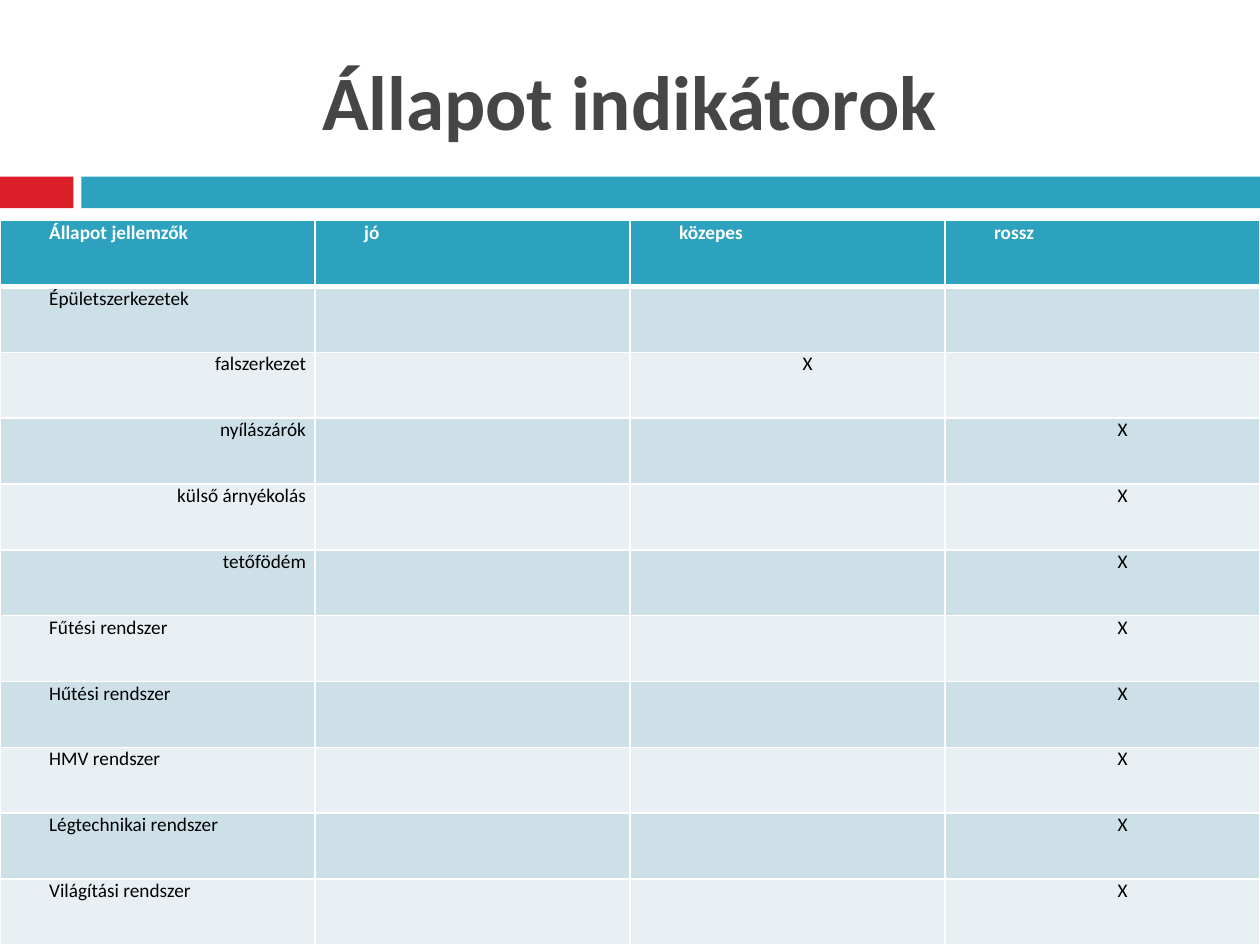
from lxml.etree import SubElement
from pptx import Presentation
from pptx.dml.color import RGBColor
from pptx.enum.shapes import MSO_SHAPE
from pptx.enum.text import MSO_ANCHOR, PP_ALIGN
from pptx.oxml import parse_xml
from pptx.oxml.ns import nsdecls
from pptx.util import Cm, Pt

TITLE = "Állapot indikátorok"
HEADER = ["Állapot jellemzők", "jó", "közepes", "rossz"]
GROUP, ITEM, SYSTEM = PP_ALIGN.JUSTIFY, PP_ALIGN.RIGHT, PP_ALIGN.LEFT
RATINGS = [
    ("Épületszerkezetek", GROUP, None),
    ("falszerkezet", ITEM, "közepes"),
    ("nyílászárók", ITEM, "rossz"),
    ("külső árnyékolás", ITEM, "rossz"),
    ("tetőfödém", ITEM, "rossz"),
    ("Fűtési rendszer", SYSTEM, "rossz"),
    ("Hűtési rendszer", SYSTEM, "rossz"),
    ("HMV rendszer", SYSTEM, "rossz"),
    ("Légtechnikai rendszer", SYSTEM, "rossz"),
    ("Világítási rendszer", SYSTEM, "rossz"),
]

THEME = {
    "font": "Calibri", "title_size": 44, "cell_size": 11,
    "title": "464646", "red": "DA1F28", "teal": "2DA2BF",
    "bands": ["CDE0E8", "E8F0F4"], "white": "FFFFFF", "black": "000000",
    "line": 1, "header_line": 3,
}

WIDTH, HEIGHT = 25.4, 19.05
BAR_TOP, BAR_HEIGHT = 3.56, 0.64
TABLE_TOP = 4.45
CELL_MARGIN, INDENT = 0.18, 0.81


def rgb(name):
    return RGBColor.from_string(THEME.get(name, name))


def style_text(p, size, color, bold):
    for r in p.runs:
        r.font.name = THEME["font"]
        r.font.size = Pt(THEME[size])
        r.font.bold = bold
        r.font.color.rgb = rgb(color)


def add_title(s):
    sp = s.shapes.title
    sp.left, sp.top, sp.width, sp.height = Cm(0), Cm(0.64), Cm(WIDTH), Cm(2.74)
    tf = sp.text_frame
    tf.text = TITLE
    tf.vertical_anchor = MSO_ANCHOR.MIDDLE
    p = tf.paragraphs[0]
    p.alignment = PP_ALIGN.CENTER
    style_text(p, "title_size", "title", True)


def add_bar(s, left, right, color):
    sp = s.shapes.add_shape(MSO_SHAPE.RECTANGLE, Cm(left), Cm(BAR_TOP),
                            Cm(right - left), Cm(BAR_HEIGHT))
    sp.shadow.inherit = False
    sp.fill.solid()
    sp.fill.fore_color.rgb = rgb(color)
    sp.line.fill.background()


def set_borders(cell, top, bottom):
    tcPr = cell._tc.get_or_add_tcPr()
    widths = {"lnL": THEME["line"], "lnR": THEME["line"], "lnT": top, "lnB": bottom}
    for i, (tag, width) in enumerate(widths.items()):
        ln = parse_xml(f'<a:{tag} {nsdecls("a")} w="{Pt(width)}"><a:solidFill>'
                       f'<a:srgbClr val="{THEME["white"]}"/></a:solidFill></a:{tag}>')
        tcPr.insert(i, ln)


def fill_cell(cell, text, align, fill, color, bold):
    cell.fill.solid()
    cell.fill.fore_color.rgb = rgb(fill)
    if not text:
        return
    cell.margin_left = cell.margin_right = Cm(CELL_MARGIN)
    cell.margin_top = cell.margin_bottom = 0
    p = cell.text_frame.paragraphs[0]
    p.text = text
    p.alignment = align
    pPr = p._p.get_or_add_pPr()
    pPr.set("marL", str(Cm(INDENT)))
    pPr.set("indent", "0")
    style_text(p, "cell_size", color, bold)


def add_ratings(s):
    rows, cols = len(RATINGS) + 1, len(HEADER)
    height = Cm(HEIGHT - TABLE_TOP)
    table = s.shapes.add_table(rows, cols, 0, Cm(TABLE_TOP), Cm(WIDTH), height).table
    for row in table.rows:
        row.height = height // rows
    for j, label in enumerate(HEADER):
        fill_cell(table.cell(0, j), label, PP_ALIGN.JUSTIFY, "teal", "white", True)
    for i, (label, align, rating) in enumerate(RATINGS):
        band = THEME["bands"][i % 2]
        fill_cell(table.cell(i + 1, 0), label, align, band, "black", False)
        for j, grade in enumerate(HEADER[1:], 1):
            mark = "X" if grade == rating else ""
            fill_cell(table.cell(i + 1, j), mark, PP_ALIGN.CENTER, band, "black", False)
    for i, row in enumerate(table.rows):
        top = THEME["header_line" if i == 1 else "line"]
        bottom = THEME["header_line" if i == 0 else "line"]
        for cell in row.cells:
            set_borders(cell, top, bottom)


def main():
    prs = Presentation()
    prs.slide_width, prs.slide_height = Cm(WIDTH), Cm(HEIGHT)
    s = prs.slides.add_slide(prs.slide_layouts[5])
    add_bar(s, 0, 1.48, "red")
    add_bar(s, 1.64, WIDTH, "teal")
    add_title(s)
    add_ratings(s)
    prs.save("out.pptx")


if __name__ == "__main__":
    main()
